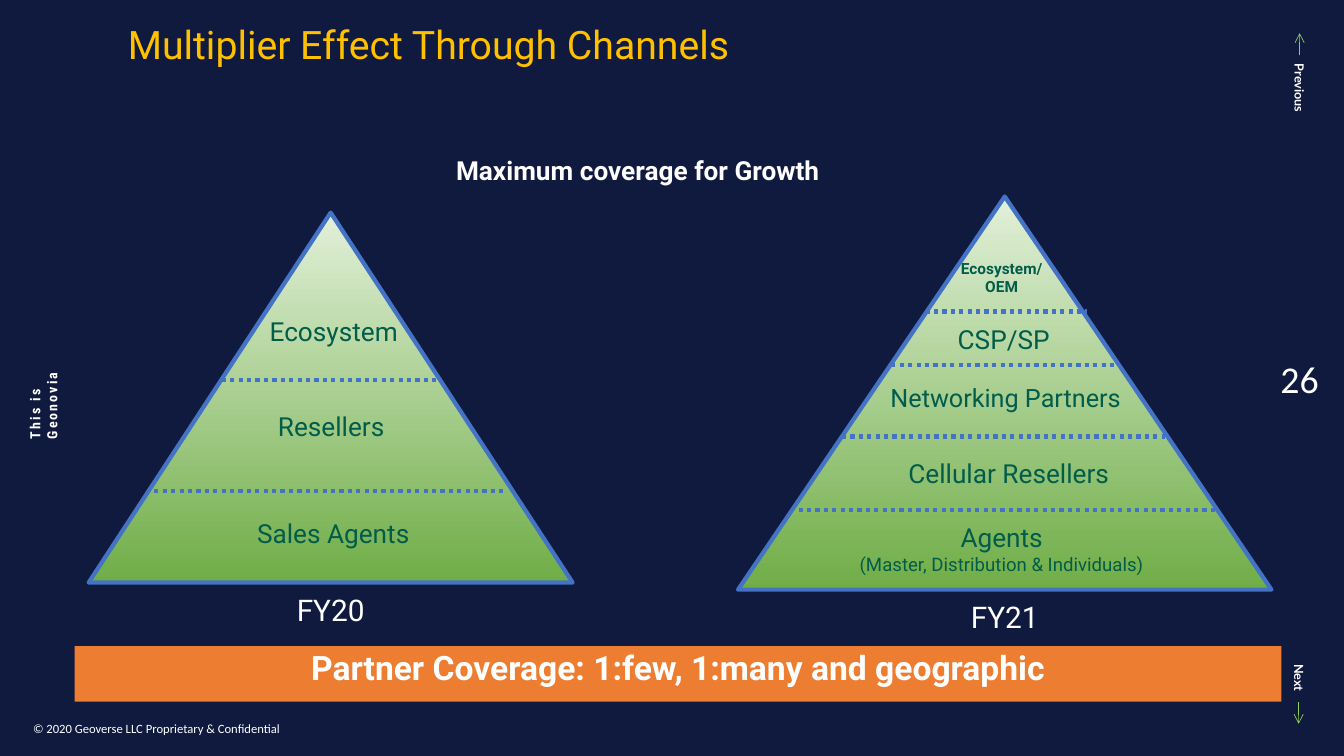
from lxml import etree
from pptx import Presentation, util as u
from pptx.dml.color import RGBColor
from pptx.enum import dml, shapes, text
from pptx.oxml import parse_xml
from pptx.oxml.ns import nsdecls, qn

NAVY, WHITE, GOLD, ORANGE = "0F1A3E", "FFFFFF", "FFC000", "ED7D31"
BLUE, GREEN, PALE, LEAF, LIME = "4472C4", "015C4A", "E2F0D9", "70AD47", "92D050"


def paint(color, value):
    """Set a colour format from a hex string."""
    color.rgb = RGBColor.from_string(value)


def write(shape, *lines, size=18.7, font="Roboto", color=WHITE, bold=False, align="LEFT",
          anchor="TOP", wrap=True, leading=None, tracking=None):
    """Fill a shape with paragraphs; a line is a string or a (string, size) pair."""
    frame = shape.text_frame
    frame.word_wrap = wrap
    frame.vertical_anchor = getattr(text.MSO_ANCHOR, anchor)
    for index, line in enumerate(lines):
        words, points = line if isinstance(line, tuple) else (line, size)
        para = frame.paragraphs[0] if index == 0 else frame.add_paragraph()
        para.alignment = getattr(text.PP_ALIGN, align)
        if leading:
            para.line_spacing = leading
        para.text = words
        for span in para.runs:
            span.font.name, span.font.size, span.font.bold = font, u.Pt(points), bold
            paint(span.font.color, color)
            if tracking:
                span.font._element.set("spc", str(tracking))
    return shape


def add_text(page, box, *lines, rotation=0, **style):
    """Add a text box at box (left, top, width, height) in inches."""
    label = page.shapes.add_textbox(*map(u.Inches, box))
    label.rotation = rotation
    return write(label, *lines, **style)


def add_line(page, start, end, color, width, dotted=False, arrow=False):
    """Draw a straight line between two points in inches."""
    line = page.shapes.add_connector(
        shapes.MSO_CONNECTOR.STRAIGHT, *map(u.Inches, (*start, *end)))
    paint(line.line.color, color)
    line.line.width = u.Pt(width)
    if dotted:
        line.line.dash_style = dml.MSO_LINE.ROUND_DOT
    if arrow:
        etree.SubElement(line.line._get_or_add_ln(), qn("a:tailEnd"), type="arrow")
    etree.SubElement(line._element.spPr, qn("a:effectLst"))


def add_navigation(page, words, box, tail, tip):
    """Add a rotated navigation label with its arrow."""
    add_text(page, box, words, rotation=90, size=9, font="Lato", bold=True, wrap=False)
    add_line(page, tail, tip, LIME, 0.5, arrow=True)


def add_frame(page):
    """Add the background, side labels, page number and footer."""
    page.background.fill.solid()
    paint(page.background.fill.fore_color, NAVY)
    add_navigation(page, "Previous", (12.54, 0.76, 0.7, 0.25), (12.89, 0.55), (12.89, 0.33))
    add_navigation(page, "Next", (12.64, 6.61, 0.49, 0.25), (12.88, 6.96), (12.88, 7.18))
    add_text(page, (-0.27, 3.62, 1.4, 0.27), "This is\vGeonovia", rotation=270, size=10,
             font="Roboto Condensed", bold=True, anchor="MIDDLE", wrap=False, tracking=150)
    add_text(page, (12.5, 2.83, 0.78, 1.84), "26", size=27, font="Calibri",
             align="CENTER", anchor="MIDDLE", wrap=False)
    add_text(page, (0.23, 6.95, 3.97, 0.4), "© 2020 Geoverse LLC Proprietary & Confidential",
             size=9, font="Calibri", anchor="BOTTOM")


def add_headings(page):
    """Add the shadowed title and the subtitle."""
    title = add_text(page, (1.17, 0.09, 11, 0.75), "Multiplier Effect Through Channels",
                     size=28, color=GOLD, anchor="MIDDLE", leading=0.9)
    shadow = parse_xml(
        f'<a:effectLst {nsdecls("a")}><a:outerShdw blurRad="38100" dist="38100" dir="2700000">'
        '<a:srgbClr val="000000"><a:alpha val="43000"/></a:srgbClr></a:outerShdw></a:effectLst>')
    properties = title.text_frame.paragraphs[0].runs[0].font._element
    properties.find(qn("a:solidFill")).addnext(shadow)
    add_text(page, (3.06, 1.48, 6.53, 0.62), "Maximum coverage for Growth",
             bold=True, align="CENTER")


def add_pyramid(page, box, year, tiers, dividers):
    """Draw a pyramid; tiers and dividers are offset from the corner of its box."""
    left, top, width, height = box
    pyramid = page.shapes.add_shape(
        shapes.MSO_SHAPE.ISOSCELES_TRIANGLE, *map(u.Inches, box))
    pyramid.shadow.inherit = False
    pyramid.fill.gradient()
    pyramid.fill.gradient_angle = 270
    for stop, position, color in zip(pyramid.fill.gradient_stops, (0, 1), (PALE, LEAF)):
        stop.position = position
        paint(stop.color, color)
    paint(pyramid.line.color, BLUE)
    pyramid.line.width = u.Pt(3)
    add_text(page, (left, top + height + 0.04, width, 0.46), year, size=21.3, align="CENTER")
    for start, drop, length in dividers:
        add_line(page, (left + start, top + drop), (left + start + length, top + drop),
                 BLUE, 3, dotted=True)
    for start, drop, length, tall, lines, style in tiers:
        add_text(page, (left + start, top + drop, length, tall), *lines,
                 color=GREEN, align="CENTER", **style)


def add_banner(page, box, words):
    """Add the coloured summary banner."""
    banner = page.shapes.add_shape(shapes.MSO_SHAPE.RECTANGLE, *map(u.Inches, box))
    banner.shadow.inherit = False
    banner.fill.solid()
    paint(banner.fill.fore_color, ORANGE)
    banner.line.fill.background()
    write(banner, words, size=24, bold=True, align="CENTER", leading=0.9)


def main():
    """Build and save the slide."""
    deck = Presentation()
    deck.slide_width, deck.slide_height = u.Inches(13.33), u.Inches(7.5)
    page = deck.slides.add_slide(deck.slide_layouts[6])
    add_frame(page)
    add_headings(page)
    add_pyramid(
        page, (0.88, 2.11, 4.8, 3.67), "FY20",
        [(1.62, 0.97, 1.62, 0.42, ["Ecosystem"], {}),
         (1.22, 1.91, 2.37, 0.42, ["Resellers"], {}),
         (0.82, 2.97, 3.21, 0.42, ["Sales Agents"], {})],
        [(1.32, 1.66, 2.16), (0.65, 2.76, 3.48)])
    add_pyramid(
        page, (7.32, 1.95, 5.29, 3.9), "FY21",
        [(2, 0.57, 1.23, 0.47, ["Ecosystem/\vOEM"], {"size": 11, "bold": True}),
         (1.88, 1.21, 1.51, 0.42, ["CSP/SP"], {}),
         (1.39, 1.79, 2.53, 0.4, ["Networking Partners"], {"size": 18}),
         (1, 2.54, 3.37, 0.42, ["Cellular Resellers"], {}),
         (0.55, 3.17, 4.13, 0.64,
          ["Agents", ("(Master, Distribution & Individuals)", 13.3)], {})],
        [(1.86, 1.14, 1.6), (1.52, 1.67, 2.27), (1.03, 2.38, 3.2), (0.6, 3.11, 4.13)])
    add_banner(page, (0.74, 6.41, 11.97, 0.55), "Partner Coverage: 1:few, 1:many and geographic")
    deck.save("out.pptx")


if __name__ == "__main__":
    main()
